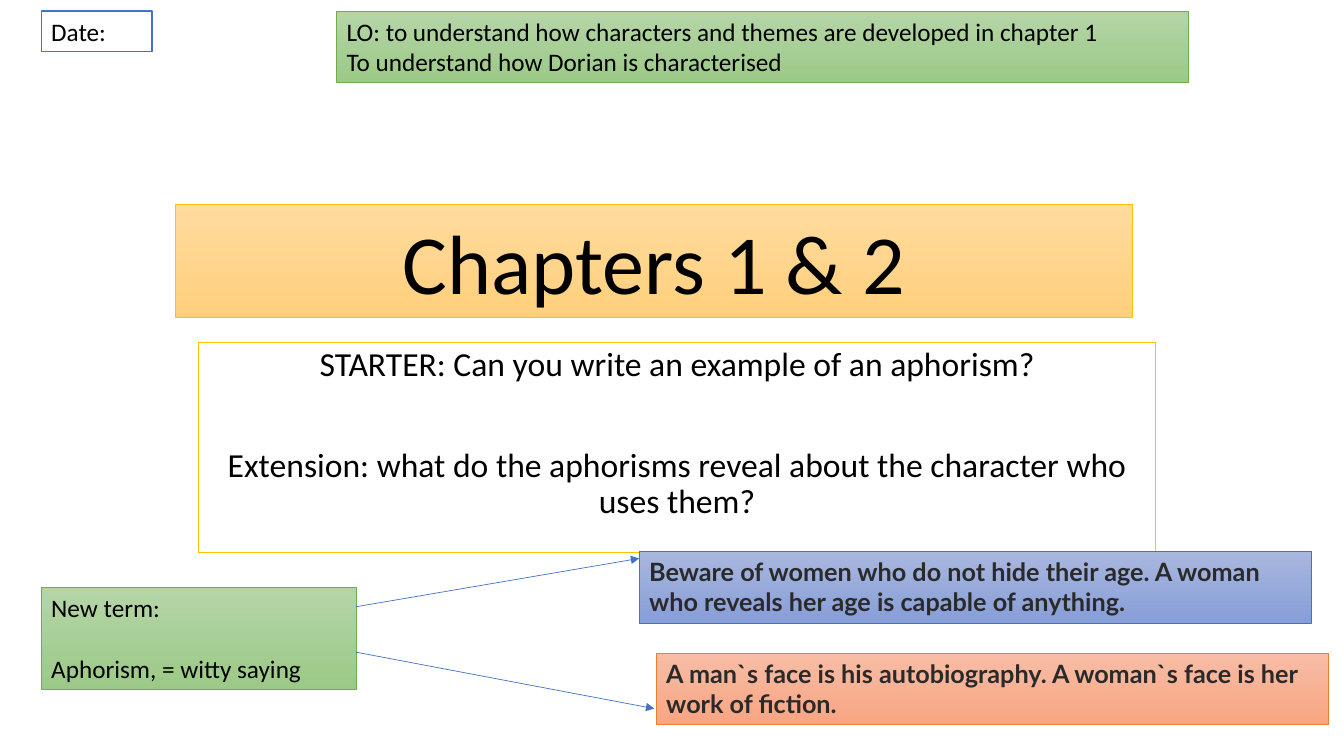
from lxml.etree import SubElement
from pptx import Presentation
from pptx.dml.color import RGBColor
from pptx.enum.shapes import MSO_CONNECTOR
from pptx.enum.text import MSO_ANCHOR, MSO_AUTO_SIZE, PP_ALIGN
from pptx.oxml.ns import qn
from pptx.util import Pt

SCALE = 9144
GREEN = ("B5D5A7", "9CC987")
GOLD = ("FFDB9E", "FFD07C")
BLUE = ("A8B7DF", "889ED7")
ORANGE = ("F7BDA5", "F8A582")
WHITE = ("FFFFFF",)


def px(length):
    """Turn whole px, 100 to the inch, into EMU."""
    return length * SCALE


def colour(value):
    """Turn a hex string into a colour."""
    return RGBColor.from_string(value)


def paint(shape, shades, edge, width):
    """Fill a shape with one shade or a downward gradient, and outline it."""
    if len(shades) == 1:
        shape.fill.solid()
        shape.fill.fore_color.rgb = colour(shades[0])
    else:
        shape.fill.gradient()
        shape.fill.gradient_angle = 270
        for stop, shade in zip(shape.fill.gradient_stops, shades):
            stop.color.rgb = colour(shade)
    shape.line.color.rgb = colour(edge)
    shape.line.width = Pt(width)


def place(shape, left, top, width, height):
    """Move a shape into a box given in px."""
    shape.left, shape.top = px(left), px(top)
    shape.width, shape.height = px(width), px(height)


def write(shape, *lines, size=18, font="Calibri", ink="000000", bold=False,
          align=PP_ALIGN.LEFT, spacing=1.0, gap=0, anchor=MSO_ANCHOR.TOP,
          fit=MSO_AUTO_SIZE.SHAPE_TO_FIT_TEXT):
    """Write formatted paragraphs into a shape, with a gap between them."""
    frame = shape.text_frame
    frame.word_wrap = True
    frame.auto_size = fit
    frame.vertical_anchor = anchor
    for index, line in enumerate(lines):
        para = frame.add_paragraph() if index else frame.paragraphs[0]
        para.alignment = align
        para.line_spacing = spacing
        para.space_before = Pt(gap if index else 0)
        span = para.add_run()
        span.text = line
        span.font.size = Pt(size)
        span.font.name = font
        span.font.bold = bold
        span.font.color.rgb = colour(ink)


def add_heading(page, box):
    """Set the chapter title in its gold band."""
    title = page.shapes.title
    place(title, *box)
    paint(title, GOLD, "FFC000", 0.5)
    write(title, "Chapters 1 & 2", size=60, align=PP_ALIGN.CENTER, spacing=0.9,
          anchor=MSO_ANCHOR.BOTTOM, fit=MSO_AUTO_SIZE.NONE)


def add_starter(page, box):
    """Set the starter and extension tasks in the subtitle."""
    tasks = page.placeholders[1]
    place(tasks, *box)
    paint(tasks, WHITE, "FFC000", 1)
    write(tasks, "STARTER: Can you write an example of an aphorism?",
          "Extension: what do the aphorisms reveal about the character who uses them?",
          size=24, align=PP_ALIGN.CENTER, spacing=0.9, gap=46,
          fit=MSO_AUTO_SIZE.NONE)


def add_label(page, box, shades, edge, *lines, width=0.5, **style):
    """Add a filled and outlined text box."""
    label = page.shapes.add_textbox(*map(px, box))
    paint(label, shades, edge, width)
    write(label, *lines, **style)


def add_arrow(page, start, end):
    """Draw a thin blue arrow between two points."""
    arrow = page.shapes.add_connector(MSO_CONNECTOR.STRAIGHT, *map(px, start + end))
    arrow.line.color.rgb = colour("4472C4")
    arrow.line.width = Pt(0.5)
    SubElement(arrow.line._get_or_add_ln(), qn("a:tailEnd"), type="triangle")
    SubElement(arrow._element.spPr, qn("a:effectLst"))


def add_header(page, left, top):
    """Add the date and the learning objectives."""
    add_label(page, (left, top, 110, 40), WHITE, "4472C4", "Date:", width=1)
    add_label(page, (left + 293, top, 845, 71), GREEN, "70AD47",
              "LO: to understand how characters and themes are developed in chapter 1",
              "To understand how Dorian is characterised")


def add_term(page, left, top):
    """Add the new term with arrows to its two example quotations."""
    right = left + 312
    add_label(page, (left, top, 312, 101), GREEN, "70AD47",
              "New term:", "Aphorism, = witty saying", gap=22)
    quotes = (
        (right + 281, top - 36, BLUE, "4472C4",
         "Beware of women who do not hide their age. "
         "A woman who reveals her age is capable of anything."),
        (right + 298, top + 65, ORANGE, "ED7D31",
         "A man`s face is his autobiography. "
         "A woman`s face is her work of fiction."),
    )
    for x, y, shades, edge, quote in quotes:
        add_label(page, (x, y, 667, 71), shades, edge, quote,
                  font="Lato", ink="2A2A2A", bold=True)
    add_arrow(page, (right, top + 19), (right + 281, top - 29))
    add_arrow(page, (right, top + 64), (right + 296, top + 120))


def main():
    """Build the lesson slide and save it."""
    deck = Presentation()
    deck.slide_width, deck.slide_height = px(1333), px(750)
    page = deck.slides.add_slide(deck.slide_layouts[0])
    add_heading(page, (174, 203, 949, 112))
    add_starter(page, (197, 340, 949, 208))
    add_header(page, 41, 11)
    add_term(page, 41, 583)
    deck.save("out.pptx")


if __name__ == "__main__":
    main()
